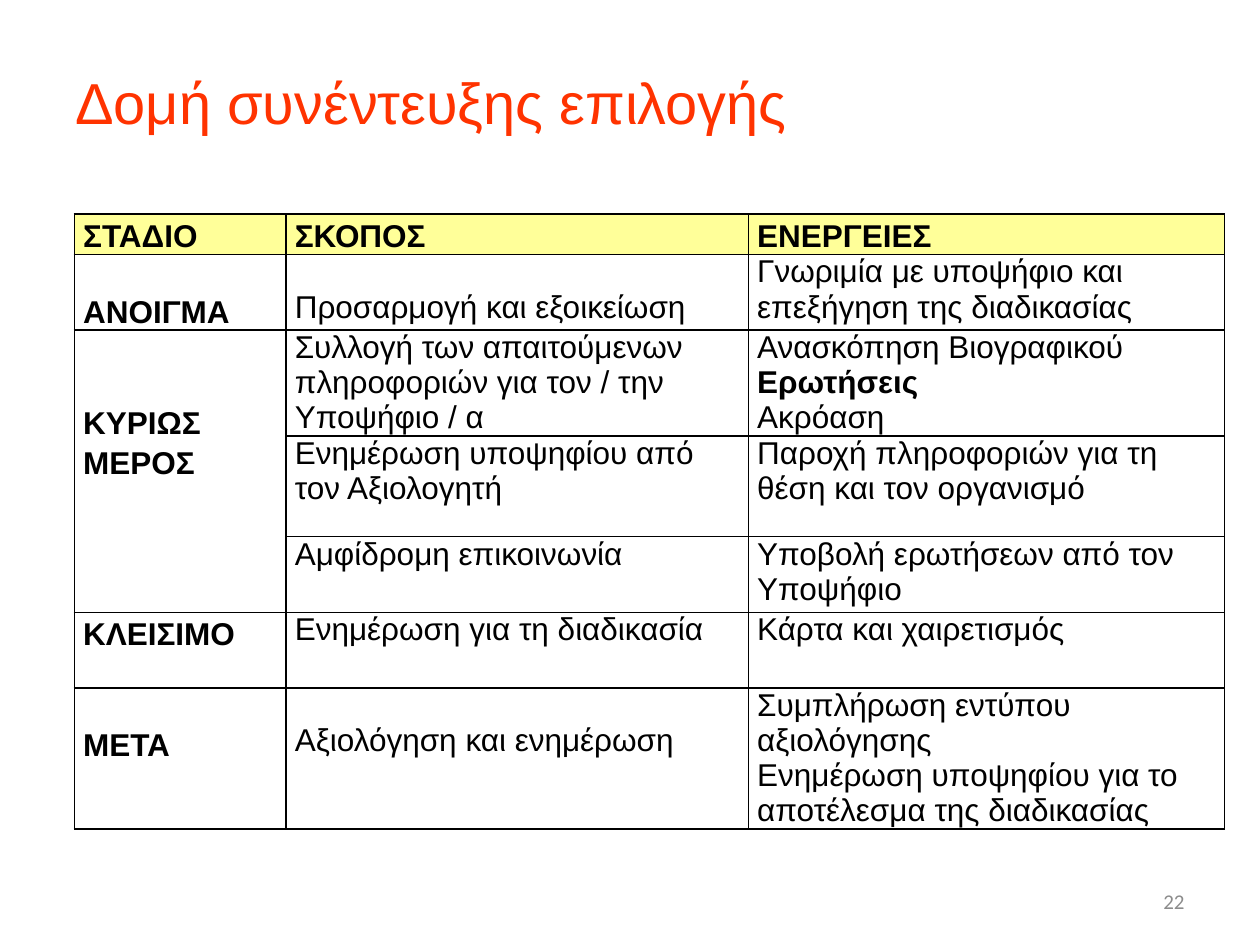
from dataclasses import dataclass

from lxml import etree
from pptx import Presentation
from pptx import util as u
from pptx.dml import color
from pptx.enum import text
from pptx.oxml import ns


@dataclass(frozen=True)
class Theme:
    """Colours, fonts, type sizes and line pitches of the slide."""
    title: str = "FF3300"
    ink: str = "000000"
    header: str = "FFFF99"
    paper: str = "FFFFFF"
    muted: str = "8C8C8C"
    font: str = "Arial"
    number_font: str = "Calibri"
    title_size: float = 33
    body_size: float = 18
    number_size: float = 12
    body_pitch: float = 20.1
    stage_pitch: float = 23


THEME = Theme()
COLUMN_WIDTHS = (1.68, 3.67, 3.78)
ROW_HEIGHTS = (0.32, 0.6, 0.84, 0.8, 0.6, 0.6, 1.12)
LINE_DROP = 0.28
STAGES = (
    ("ΣΤΑΔΙΟ", "ΣΚΟΠΟΣ", "ΕΝΕΡΓΕΙΕΣ"),
    ("ΑΝΟΙΓΜΑ", "Προσαρμογή και εξοικείωση",
     "Γνωριμία με υποψήφιο και επεξήγηση της διαδικασίας"),
    ("ΚΥΡΙΩΣ ΜΕΡΟΣ", "Συλλογή των απαιτούμενων πληροφοριών για τον / την Υποψήφιο / α",
     "Ανασκόπηση Βιογραφικού\nΕρωτήσεις\nΑκρόαση"),
    ("", "Ενημέρωση υποψηφίου από τον Αξιολογητή",
     "Παροχή πληροφοριών για τη θέση και τον οργανισμό"),
    ("", "Αμφίδρομη επικοινωνία", "Υποβολή ερωτήσεων από τον Υποψήφιο"),
    ("ΚΛΕΙΣΙΜΟ", "Ενημέρωση για τη διαδικασία", "Κάρτα και χαιρετισμός"),
    ("ΜΕΤΑ", "Αξιολόγηση και ενημέρωση",
     "Συμπλήρωση εντύπου αξιολόγησης\n"
     "Ενημέρωση υποψηφίου για το αποτέλεσμα της διαδικασίας"),
)
MAIN_STAGE = (2, 4)
DROPPED_LINES = {(1, 0): 1, (1, 1): 1, (2, 0): 2, (6, 0): 1, (6, 1): 1}
BOLD_ACTION = "Ερωτήσεις"


def style_runs(paragraph, font, size, rgb, bold=False):
    """Format every run of a paragraph."""
    for run in paragraph.runs:
        run.font.name = font
        run.font.size = u.Pt(size)
        run.font.bold = bold
        run.font.color.rgb = color.RGBColor.from_string(rgb)


def add_label(slide, box, wording, font, size, rgb, align):
    """Place one line of text, centred vertically in its box."""
    frame = slide.shapes.add_textbox(*map(u.Inches, box)).text_frame
    frame.word_wrap = True
    frame.vertical_anchor = text.MSO_ANCHOR.MIDDLE
    frame.text = wording
    frame.paragraphs[0].alignment = align
    style_runs(frame.paragraphs[0], font, size, rgb)


def add_borders(cell):
    """Draw a thin line on the four sides of a cell."""
    properties = cell._tc.get_or_add_tcPr()
    for position, side in enumerate(("a:lnL", "a:lnR", "a:lnT", "a:lnB")):
        line = etree.Element(ns.qn(side), w=str(u.Pt(1)))
        fill = etree.SubElement(line, ns.qn("a:solidFill"))
        etree.SubElement(fill, ns.qn("a:srgbClr"), val=THEME.ink)
        properties.insert(position, line)


def fill_cell(cell, wording, row, column):
    """Write and format one cell of the stage table."""
    stage_style = row == 0 or column == 0
    cell.margin_left = cell.margin_right = u.Inches(0.07)
    cell.margin_top = u.Inches(LINE_DROP * DROPPED_LINES.get((row, column), 0))
    cell.margin_bottom = 0
    cell.fill.solid()
    cell.fill.fore_color.rgb = color.RGBColor.from_string(
        THEME.paper if row else THEME.header)
    add_borders(cell)
    if not wording:
        return
    cell.text_frame.text = wording
    for paragraph in cell.text_frame.paragraphs:
        paragraph.line_spacing = u.Pt(
            THEME.stage_pitch if stage_style else THEME.body_pitch)
        if stage_style:
            paragraph.alignment = text.PP_ALIGN.JUSTIFY
        style_runs(paragraph, THEME.font, THEME.body_size, THEME.ink,
                   stage_style or paragraph.text == BOLD_ACTION)


def add_stage_table(slide, left, top):
    """Build the table of interview stages from its top left corner."""
    table = slide.shapes.add_table(
        len(STAGES), len(COLUMN_WIDTHS), u.Inches(left), u.Inches(top),
        u.Inches(sum(COLUMN_WIDTHS)), u.Inches(sum(ROW_HEIGHTS))).table
    table.first_row = table.horz_banding = False
    for column, width in zip(table.columns, COLUMN_WIDTHS):
        column.width = u.Inches(width)
    for row, height in zip(table.rows, ROW_HEIGHTS):
        row.height = u.Inches(height)
    for row, stage in enumerate(STAGES):
        for column, wording in enumerate(stage):
            fill_cell(table.cell(row, column), wording, row, column)
    first, last = MAIN_STAGE
    table.cell(first, 0).merge(table.cell(last, 0))


def main():
    """Build and save the slide."""
    deck = Presentation()
    deck.slide_width, deck.slide_height = u.Inches(10), u.Inches(7.5)
    slide = deck.slides.add_slide(deck.slide_layouts[6])
    add_label(slide, (0.5, 0.3, 9, 1.01), "Δομή συνέντευξης επιλογής",
              THEME.font, THEME.title_size, THEME.title, text.PP_ALIGN.LEFT)
    add_label(slide, (7.17, 6.95, 2.33, 0.4), "22", THEME.number_font,
              THEME.number_size, THEME.muted, text.PP_ALIGN.RIGHT)
    add_stage_table(slide, 0.59, 1.7)
    deck.save("out.pptx")


if __name__ == "__main__":
    main()
